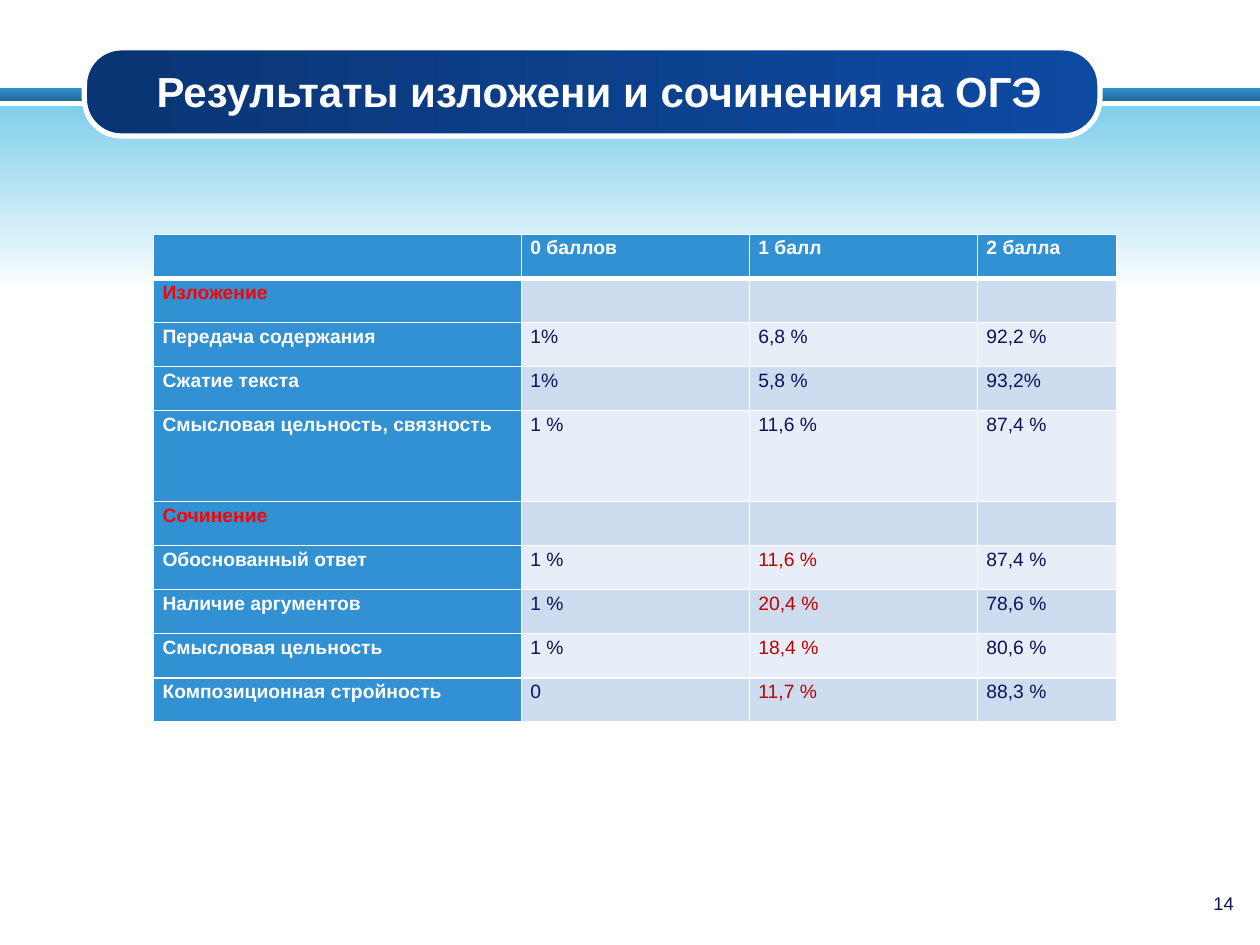
"""Build a slide with a table of exam results for the summary and the essay."""
from typing import NamedTuple

from lxml.etree import SubElement
from pptx import Presentation
from pptx.dml.color import RGBColor as RGB
from pptx.enum.shapes import MSO_SHAPE as SHAPE
from pptx.enum.text import MSO_ANCHOR as ANCHOR, PP_ALIGN as ALIGN
from pptx.oxml.ns import qn
from pptx.util import Inches, Pt

COLORS = {
    "white": "FFFFFF", "navy": "0D1259", "blue": "3191D3", "steel": "236897",
    "sky": "81CFEB", "pill_left": "0A3574", "pill_right": "0E4AA2",
    "odd": "CEDCEF", "even": "E8EEF7", "section": "FF0000", "accent": "C00000",
}


class Band(NamedTuple):
    kind: SHAPE
    box: tuple[float, float, float, float]
    start: str
    end: str
    angle: int


class Row(NamedTuple):
    label: str
    values: tuple[str, str, str] = ("", "", "")
    label_color: str = "white"
    middle_color: str = "navy"
    height: float = 0.35


BANDS = [
    Band(SHAPE.RECTANGLE, (0, 0.7, 10, 0.1), "blue", "steel", 270),
    Band(SHAPE.RECTANGLE, (0, 0.84, 10, 1.49), "sky", "white", 270),
    Band(SHAPE.ROUNDED_RECTANGLE, (0.67, 0.38, 8.06, 0.7), "pill_left", "pill_right", 0),
]
COLUMNS = [2.92, 1.81, 1.81, 1.1]
ROWS = [
    Row("", ("0 баллов", "1 балл", "2 балла")),
    Row("Изложение", label_color="section"),
    Row("Передача содержания", ("1%", "6,8 %", "92,2 %")),
    Row("Сжатие текста", ("1%", "5,8 %", "93,2%")),
    Row("Смысловая цельность, связность", ("1 %", "11,6 %", "87,4 %"), height=0.72),
    Row("Сочинение", label_color="section"),
    Row("Обоснованный ответ", ("1 %", "11,6 %", "87,4 %"), middle_color="accent"),
    Row("Наличие аргументов", ("1 %", "20,4 %", "78,6 %"), middle_color="accent"),
    Row("Смысловая цельность", ("1 %", "18,4 %", "80,6 %"), middle_color="accent"),
    Row("Композиционная стройность", ("0", "11,7 %", "88,3 %"), middle_color="accent"),
]


def rgb(name: str) -> RGB:
    return RGB.from_string(COLORS[name])


def set_font(p, size: float, color: str, bold: bool = False) -> None:
    p.font.name = "Arial"
    p.font.size = Pt(size)
    p.font.bold = bold
    p.font.color.rgb = rgb(color)


def add_band(s, band: Band):
    sp = s.shapes.add_shape(band.kind, *map(Inches, band.box))
    sp.shadow.inherit = False
    sp.fill.gradient()
    sp.fill.gradient_angle = band.angle
    for stop, color in zip(sp.fill.gradient_stops, (band.start, band.end)):
        stop.color.rgb = rgb(color)
    sp.line.fill.background()
    return sp


def set_borders(cell, bottom: int) -> None:
    tc_pr = cell._tc.get_or_add_tcPr()
    for side, width in (("L", 1), ("R", 1), ("T", 1), ("B", bottom)):
        ln = SubElement(tc_pr, qn(f"a:ln{side}"), w=str(Pt(width)))
        fill = SubElement(ln, qn("a:solidFill"))
        SubElement(fill, qn("a:srgbClr"), val=COLORS["white"])


def fill_cell(cell, text: str, fill: str, color: str, bold: bool, bottom: int) -> None:
    set_borders(cell, bottom)
    cell.fill.solid()
    cell.fill.fore_color.rgb = rgb(fill)
    cell.margin_left = cell.margin_right = Inches(0.07)
    cell.margin_top = cell.margin_bottom = 0
    cell.text = text
    p = cell.text_frame.paragraphs[0]
    p.line_spacing = 1.15
    set_font(p, 11, color, bold)


def add_results(s) -> None:
    frame = s.shapes.add_table(
        len(ROWS), len(COLUMNS), Inches(1.22), Inches(1.86),
        Inches(sum(COLUMNS)), Inches(sum(row.height for row in ROWS)))
    table = frame.table
    for column, width in zip(table.columns, COLUMNS):
        column.width = Inches(width)
    for i, row in enumerate(ROWS):
        table.rows[i].height = Inches(row.height)
        colors = (row.label_color, "navy", row.middle_color, "navy")
        for j, text in enumerate((row.label, *row.values)):
            head = i == 0 or j == 0
            fill = "blue" if head else "odd" if i % 2 else "even"
            color = "white" if i == 0 else colors[j]
            fill_cell(table.cell(i, j), text, fill, color, head, 3 if i == 0 else 1)


def add_title(s, text: str) -> None:
    title = s.shapes.title
    title.element.getparent().append(title.element)
    title.left, title.top, title.width, title.height = map(Inches, (0.92, 0.41, 7.67, 0.62))
    tf = title.text_frame
    tf.text = text
    tf.vertical_anchor = ANCHOR.MIDDLE
    p = tf.paragraphs[0]
    p.alignment = ALIGN.CENTER
    set_font(p, 24, "white", True)


def add_page_number(s, number: str) -> None:
    tf = s.shapes.add_textbox(*map(Inches, (8.98, 7.03, 0.91, 0.32))).text_frame
    tf.word_wrap = True
    tf.text = number
    p = tf.paragraphs[0]
    p.alignment = ALIGN.RIGHT
    set_font(p, 10.5, "navy")


def main() -> None:
    prs = Presentation()
    prs.slide_width, prs.slide_height = Inches(10), Inches(7.5)
    s = prs.slides.add_slide(prs.slide_layouts[5])
    *_, pill = [add_band(s, band) for band in BANDS]
    pill.adjustments[0] = 0.42
    pill.line.color.rgb = rgb("white")
    pill.line.width = Pt(3)
    add_title(s, "Результаты изложени и сочинения на ОГЭ")
    add_page_number(s, "14")
    add_results(s)
    prs.save("out.pptx")


if __name__ == "__main__":
    main()
